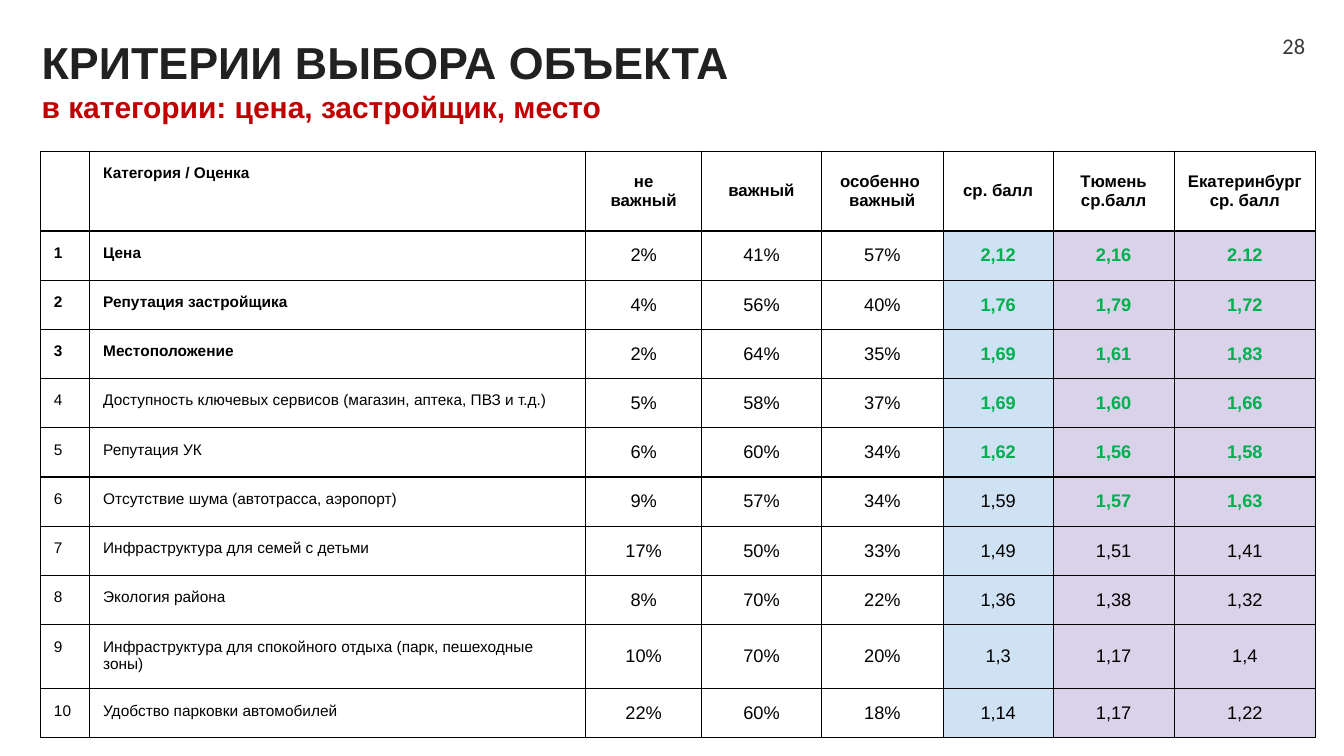
from dataclasses import dataclass
from typing import NamedTuple

from lxml import etree
from pptx import Presentation
from pptx.dml import color
from pptx.enum import text as enums
from pptx.oxml import ns
from pptx.util import Cm, Pt

ALIGN = enums.PP_ALIGN
ANCHOR = enums.MSO_ANCHOR


@dataclass(frozen=True)
class Theme:
    font: str = "Arial"
    page_font: str = "Calibri"
    title: str = "212121"
    accent: str = "C00000"
    ink: str = "000000"
    good: str = "00B050"
    page: str = "393939"
    plain: str = "FFFFFF"
    total: str = "CFE2F3"
    city: str = "D9D2E9"
    title_size: float = 32
    sub_size: float = 21.4
    page_size: float = 16
    label_size: float = 11
    head_size: float = 12
    value_size: float = 13
    inset: float = 0.34


class Style(NamedTuple):
    size: float
    color: str
    bold: bool = False
    font: str = "Arial"
    align: ALIGN = ALIGN.LEFT


class Box(NamedTuple):
    left: float
    top: float
    width: float
    height: float


class Factor(NamedTuple):
    label: str
    shares: tuple[str, str, str]
    scores: tuple[str, str, str]
    good: int = 0
    bold: bool = False


THEME = Theme()
WIDTHS = (1.24, 12.5, 2.92, 3.02, 3.07, 2.77, 3.05, 3.56)
HEAD_ROW, BODY_ROW = 2.01, 1.24
HEADS = ("", "Категория / Оценка", "не важный", "важный", "особенно \nважный",
         "ср. балл", "Тюмень ср.балл", "Екатеринбург\nср. балл")
FILLS = (THEME.plain,) * 5 + (THEME.total, THEME.city, THEME.city)
FACTORS = (
    Factor("Цена", ("2%", "41%", "57%"), ("2,12", "2,16", "2.12"), 3, True),
    Factor("Репутация застройщика", ("4%", "56%", "40%"), ("1,76", "1,79", "1,72"), 3, True),
    Factor("Местоположение", ("2%", "64%", "35%"), ("1,69", "1,61", "1,83"), 3, True),
    Factor("Доступность ключевых сервисов (магазин, аптека, ПВЗ и т.д.)",
           ("5%", "58%", "37%"), ("1,69", "1,60", "1,66"), 3),
    Factor("Репутация УК", ("6%", "60%", "34%"), ("1,62", "1,56", "1,58"), 3),
    Factor("Отсутствие шума (автотрасса, аэропорт)",
           ("9%", "57%", "34%"), ("1,59", "1,57", "1,63"), 2),
    Factor("Инфраструктура для семей с детьми",
           ("17%", "50%", "33%"), ("1,49", "1,51", "1,41")),
    Factor("Экология района", ("8%", "70%", "22%"), ("1,36", "1,38", "1,32")),
    Factor("Инфраструктура для спокойного отдыха (парк, пешеходные зоны)",
           ("10%", "70%", "20%"), ("1,3", "1,17", "1,4")),
    Factor("Удобство парковки автомобилей",
           ("22%", "60%", "18%"), ("1,14", "1,17", "1,22")),
)


def format_line(line, style: Style) -> None:
    line.alignment = style.align
    for font in [run.font for run in line.runs] or [line.font]:
        font.name = style.font
        font.size = Pt(style.size)
        font.bold = style.bold
        font.color.rgb = color.RGBColor.from_string(style.color)


def set_inset(item, size: float) -> None:
    item.margin_left = item.margin_right = Cm(size)
    item.margin_top = item.margin_bottom = Cm(size)


def add_text(slide, box: Box, words: str, styles: tuple[Style, ...], inset: float):
    frame = slide.shapes.add_textbox(*map(Cm, box)).text_frame
    frame.word_wrap = True
    set_inset(frame, inset)
    frame.text = words
    for line, style in zip(frame.paragraphs, styles):
        format_line(line, style)
    return frame


def add_border(cell) -> None:
    props = cell._tc.get_or_add_tcPr()
    for side in ("lnL", "lnR", "lnT", "lnB"):
        edge = etree.SubElement(props, ns.qn(f"a:{side}"), w=str(Pt(1)))
        fill = etree.SubElement(edge, ns.qn("a:solidFill"))
        etree.SubElement(fill, ns.qn("a:srgbClr"), val=THEME.ink)


def fill_cell(cell, words: str, style: Style, fill: str) -> None:
    add_border(cell)
    cell.fill.solid()
    cell.fill.fore_color.rgb = color.RGBColor.from_string(fill)
    set_inset(cell, THEME.inset)
    middle = style.align == ALIGN.CENTER
    cell.vertical_anchor = ANCHOR.MIDDLE if middle else ANCHOR.TOP
    cell.text_frame.text = words
    for line in cell.text_frame.paragraphs:
        format_line(line, style)


def head_style(col: int) -> Style:
    if col < 2:
        return Style(THEME.label_size, THEME.ink, True)
    return Style(THEME.head_size, THEME.ink, True, align=ALIGN.CENTER)


def body_style(factor: Factor, col: int) -> Style:
    if col < 2:
        return Style(THEME.label_size, THEME.ink, factor.bold)
    good = col >= len(WIDTHS) - factor.good
    tint = THEME.good if good else THEME.ink
    return Style(THEME.value_size, tint, good, align=ALIGN.CENTER)


def add_grid(slide) -> None:
    high = HEAD_ROW + BODY_ROW * len(FACTORS)
    box = Box(1.02, 3.81, sum(WIDTHS), high)
    grid = slide.shapes.add_table(len(FACTORS) + 1, len(WIDTHS), *map(Cm, box)).table
    grid.first_row = grid.horz_banding = False
    for col, width in enumerate(WIDTHS):
        grid.columns[col].width = Cm(width)
        fill_cell(grid.cell(0, col), HEADS[col], head_style(col), THEME.plain)
    grid.rows[0].height = Cm(HEAD_ROW)
    for row, factor in enumerate(FACTORS, 1):
        grid.rows[row].height = Cm(BODY_ROW)
        words = (str(row), factor.label, *factor.shares, *factor.scores)
        for col, word in enumerate(words):
            fill_cell(grid.cell(row, col), word, body_style(factor, col), FILLS[col])


def main() -> None:
    deck = Presentation()
    deck.slide_width, deck.slide_height = Cm(33.87), Cm(19.05)
    slide = deck.slides.add_slide(deck.slide_layouts[6])
    add_text(slide, Box(0.71, 0.53, 30.84, 2.46),
             "КРИТЕРИИ ВЫБОРА ОБЪЕКТА\nв категории: цена, застройщик, место",
             (Style(THEME.title_size, THEME.title, True),
              Style(THEME.sub_size, THEME.accent, True)), THEME.inset)
    add_grid(slide)
    page = add_text(slide, Box(31.47, 0.66, 1.42, 1.04), "28",
                    (Style(THEME.page_size, THEME.page, font=THEME.page_font,
                           align=ALIGN.RIGHT),), 0)
    page.vertical_anchor = ANCHOR.MIDDLE
    page.paragraphs[0].line_spacing = 0.9
    deck.save("out.pptx")


if __name__ == "__main__":
    main()
